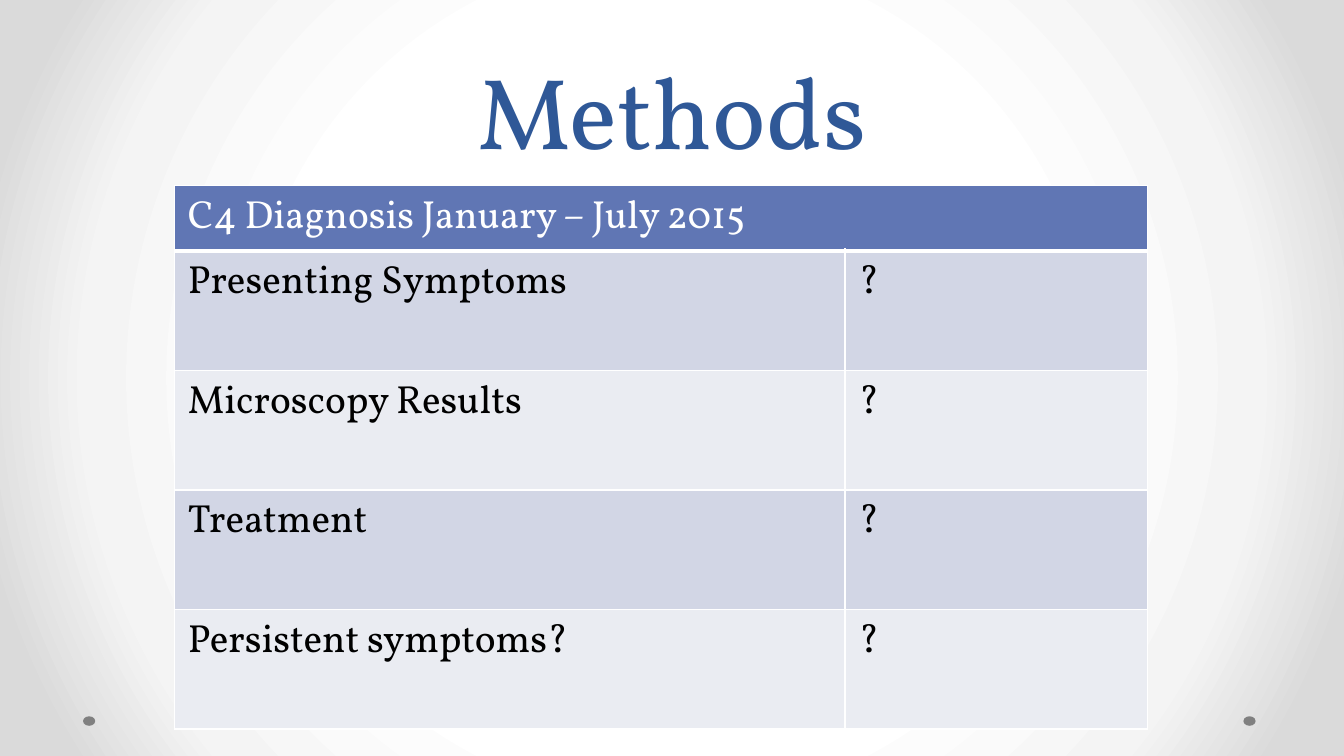
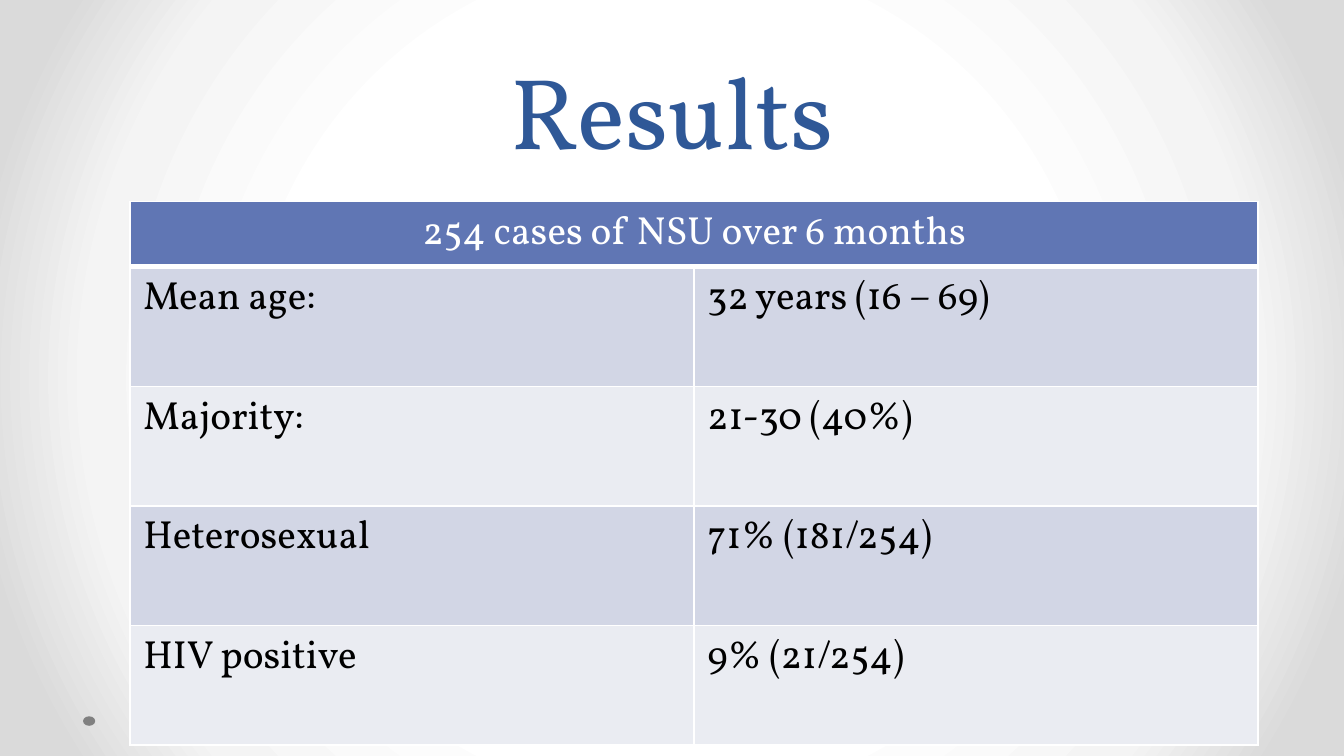
from lxml import etree
from pptx import Presentation
from pptx.dml.color import RGBColor
from pptx.enum.shapes import MSO_SHAPE
from pptx.enum.text import MSO_ANCHOR, MSO_AUTO_SIZE, PP_ALIGN
from pptx.oxml import parse_xml
from pptx.oxml.ns import nsdecls, qn
from pptx.util import Cm, Pt

OVAL = MSO_SHAPE.OVAL
BOTTOM = MSO_ANCHOR.BOTTOM
NO_FIT = MSO_AUTO_SIZE.NONE
LEFT, CENTER = PP_ALIGN.LEFT, PP_ALIGN.CENTER

FONT = "Vollkorn"
TITLE_BLUE = RGBColor(0x2F, 0x58, 0x97)
HEADER_BLUE = RGBColor(0x60, 0x76, 0xB4)
BAND_DARK = RGBColor(0xD2, 0xD6, 0xE5)
BAND_LIGHT = RGBColor(0xEA, 0xEC, 0xF2)
WHITE = RGBColor(0xFF, 0xFF, 0xFF)
BLACK = RGBColor(0x00, 0x00, 0x00)
GREY = RGBColor(0x80, 0x80, 0x80)
BACKDROP = ((50, WHITE), (76, RGBColor(0xF4, 0xF4, 0xF4)), (92, RGBColor(0xDA, 0xDA, 0xDA)))

TITLE_BOX = (1.27, 0, 22.86, 3.33)
DOT_LEFTS = (23.5, 1.57)
DOT_TOP, DOT_WIDTH, DOT_HEIGHT = 13.54, 0.23, 0.18
HEADER_HEIGHT, ROW_HEIGHT = 1.22, 2.26


def write(tf, text, size=21, color=BLACK, align=LEFT, spacing=None):
    """Write one formatted paragraph into a text frame."""
    p = tf.paragraphs[0]
    p.alignment = align
    p.line_spacing = spacing
    r = p.add_run()
    r.text = text
    r.font.name = FONT
    r.font.size = Pt(size)
    r.font.bold = False
    r.font.color.rgb = color


def set_backdrop(master):
    """Give the master a radial gradient background."""
    master.background.fill.solid()
    solid = master.element.find(".//" + qn("p:bgPr")).find(qn("a:solidFill"))
    stops = "".join(
        f'<a:gs pos="{pos * 1000}"><a:srgbClr val="{color}"/></a:gs>' for pos, color in BACKDROP
    )
    solid.getparent().replace(solid, parse_xml(
        f'<a:gradFill {nsdecls("a")} rotWithShape="1"><a:gsLst>{stops}</a:gsLst>'
        '<a:path path="circle"><a:fillToRect l="50000" t="50000" r="50000" b="50000"/></a:path>'
        '</a:gradFill>'
    ))


def add_dots(s):
    """Place the two small footer dots."""
    for left in DOT_LEFTS:
        sp = s.shapes.add_shape(OVAL, Cm(left), Cm(DOT_TOP), Cm(DOT_WIDTH), Cm(DOT_HEIGHT))
        sp.shadow.inherit = False
        sp.fill.solid()
        sp.fill.fore_color.rgb = GREY
        sp.line.fill.background()


def set_title(s, text):
    """Place and format the title placeholder."""
    sp = s.shapes.title
    sp.left, sp.top, sp.width, sp.height = map(Cm, TITLE_BOX)
    tf = sp.text_frame
    tf.auto_size = NO_FIT
    tf.vertical_anchor = BOTTOM
    write(tf, text, size=54, color=TITLE_BLUE, align=CENTER, spacing=Pt(58))


def style_cell(cell, color, bottom=1):
    """Set the borders, margins and fill of a cell."""
    tcPr = cell._tc.get_or_add_tcPr()
    for side, width in (("L", 1), ("R", 1), ("T", 1), ("B", bottom)):
        ln = etree.SubElement(tcPr, qn(f"a:ln{side}"), w=str(Pt(width)))
        fill = etree.SubElement(ln, qn("a:solidFill"))
        etree.SubElement(fill, qn("a:srgbClr"), val=str(WHITE))
    cell.margin_left = cell.margin_right = Cm(0.25)
    cell.margin_top = cell.margin_bottom = Cm(0.1)
    cell.fill.solid()
    cell.fill.fore_color.rgb = color


def add_banded_table(s, left, top, widths, header, rows, align):
    """Add a two-column table under a merged header row."""
    height = HEADER_HEIGHT + ROW_HEIGHT * len(rows)
    table = s.shapes.add_table(
        len(rows) + 1, len(widths), Cm(left), Cm(top), Cm(sum(widths)), Cm(height)
    ).table
    for column, width in zip(table.columns, widths):
        column.width = Cm(width)
    table.rows[0].height = Cm(HEADER_HEIGHT)
    for col in range(len(widths)):
        style_cell(table.cell(0, col), HEADER_BLUE, bottom=3)
    table.cell(0, 0).merge(table.cell(0, len(widths) - 1))
    write(table.cell(0, 0).text_frame, header, color=WHITE, align=align)
    for i, row in enumerate(rows, 1):
        table.rows[i].height = Cm(ROW_HEIGHT)
        for col, text in enumerate(row):
            cell = table.cell(i, col)
            style_cell(cell, BAND_DARK if i % 2 else BAND_LIGHT)
            write(cell.text_frame, text)


def add_table_slide(prs, title, left, top, widths, header, rows, align=LEFT):
    """Add a slide with a title, footer dots and a table."""
    s = prs.slides.add_slide(prs.slide_layouts[5])
    add_dots(s)
    set_title(s, title)
    add_banded_table(s, left, top, widths, header, rows, align)


def main():
    """Build and save the presentation."""
    prs = Presentation()
    prs.slide_width, prs.slide_height = Cm(25.4), Cm(14.29)
    set_backdrop(prs.slide_master)
    questions = ("Presenting Symptoms", "Microscopy Results", "Treatment", "Persistent symptoms?")
    add_table_slide(
        prs, "Methods", 3.3, 3.51, (12.67, 5.72),
        "C4 Diagnosis January – July 2015", [(question, "?") for question in questions],
    )
    results = [
        ("Mean age:", "32 years (16 – 69)"),
        ("Majority:", "21-30 (40%)"),
        ("Heterosexual", "71% (181/254)"),
        ("HIV positive", "9% (21/254)"),
    ]
    add_table_slide(
        prs, "Results", 2.46, 3.81, (10.66, 10.66),
        "254 cases of NSU over 6 months", results, align=CENTER,
    )
    prs.save("out.pptx")


if __name__ == "__main__":
    main()
